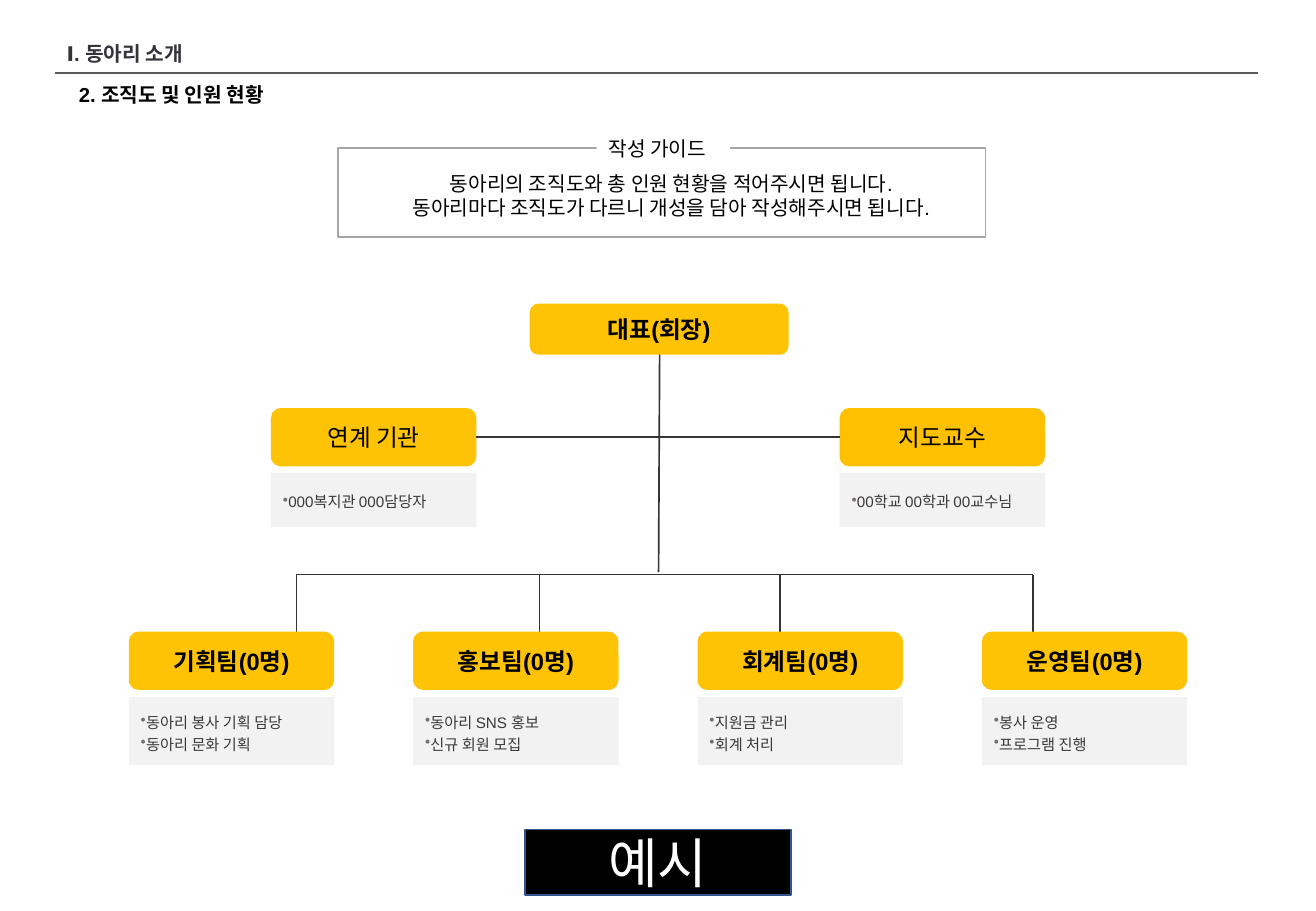
"""Build the club organisation chart slide."""
from lxml import etree
from pptx import Presentation, util as u
from pptx.dml.color import RGBColor
from pptx.enum import shapes, text
from pptx.oxml.ns import qn

WIDTH, HEIGHT = 10.83, 7.5
COLORS = dict(ink="36333A", black="000000", white="FFFFFF", rule="595959",
              frame="A6A6A6", yellow="FFC305", amber="FFC000", panel="F2F2F2",
              duty="3B3838", bullet="766F6B", border="325491")

SECTION = "Ⅰ. 동아리 소개"
TOPIC = "2. 조직도 및 인원 현황"
GUIDE_LABEL = "작성 가이드"
GUIDE = ["동아리의 조직도와 총 인원 현황을 적어주시면 됩니다.",
         "동아리마다 조직도가 다르니 개성을 담아 작성해주시면 됩니다."]
PRESIDENT = "대표(회장)"
PARTNERS = [
    (0.5, "연계 기관", ["000복지관 000담당자"], "yellow"),
    (2.5, "지도교수", ["00학교 00학과 00교수님"], "amber"),
]
TEAMS = [
    ("기획팀(0명)", ["동아리 봉사 기획 담당", "동아리 문화 기획"]),
    ("홍보팀(0명)", ["동아리 SNS 홍보", "신규 회원 모집"]),
    ("회계팀(0명)", ["지원금 관리", "회계 처리"]),
    ("운영팀(0명)", ["봉사 운영", "프로그램 진행"]),
]
STAMP = "예시"

GRID_LEFT, PITCH, CARD_WIDTH, CARD_HEIGHT = 1.06, 2.34, 1.69, 0.48
PARTNER_TOP, TEAM_TOP = 3.36, 5.2
BRANCH_Y, BRANCH_XS = 4.73, (2.44, 4.44, 6.42, 8.5)
RECTANGLE = shapes.MSO_SHAPE.RECTANGLE
ROUNDED = shapes.MSO_SHAPE.ROUNDED_RECTANGLE
CENTER, LEFT = text.PP_ALIGN.CENTER, text.PP_ALIGN.LEFT
TOP, MIDDLE, BOTTOM = (text.MSO_ANCHOR.TOP, text.MSO_ANCHOR.MIDDLE,
                       text.MSO_ANCHOR.BOTTOM)

presentation = Presentation()
presentation.slide_width = u.Inches(WIDTH)
presentation.slide_height = u.Inches(HEIGHT)
slide = presentation.slides.add_slide(presentation.slide_layouts[6])


def rgb(name):
    """Look up a named colour."""
    return RGBColor.from_string(COLORS[name])


def add_bullet(paragraph):
    """Give a paragraph a hanging grey bullet."""
    properties = paragraph._p.get_or_add_pPr()
    properties.set("marL", "0")
    properties.set("indent", str(-u.Inches(0.2)))
    color = etree.SubElement(properties, qn("a:buClr"))
    etree.SubElement(color, qn("a:srgbClr"), val=COLORS["bullet"])
    etree.SubElement(properties, qn("a:buChar"), char="•")


def write(shape, lines, size=12, color="black", bold=False, align=LEFT,
          anchor=TOP, wrap=True, grow=False, spacing=None, before=None,
          bullets=False):
    """Fill a shape with formatted paragraphs."""
    frame = shape.text_frame
    frame.word_wrap, frame.vertical_anchor = wrap, anchor
    if grow:
        frame.auto_size = text.MSO_AUTO_SIZE.SHAPE_TO_FIT_TEXT
    for index, line in enumerate(lines):
        paragraph = frame.add_paragraph() if index else frame.paragraphs[0]
        paragraph.alignment = align
        paragraph.line_spacing = spacing
        if before:
            paragraph.space_before = u.Pt(before)
        if bullets:
            add_bullet(paragraph)
        run = paragraph.add_run()
        run.text = line
        run.font.name, run.font.size, run.font.bold = "Arial", u.Pt(size), bold
        run.font.color.rgb = rgb(color)


def add_box(kind, left, top, width, height, fill=None, line=None):
    """Add a preset shape with an optional fill and outline."""
    shape = slide.shapes.add_shape(
        kind, *map(u.Inches, (left, top, width, height)))
    shape.shadow.inherit = False
    if fill:
        shape.fill.solid()
        shape.fill.fore_color.rgb = rgb(fill)
    else:
        shape.fill.background()
    if line:
        shape.line.color.rgb = rgb(line)
        shape.line.width = u.Pt(1)
    else:
        shape.line.fill.background()
    return shape


def add_text(left, top, width, height, lines, **style):
    """Add a text box."""
    box = slide.shapes.add_textbox(*map(u.Inches, (left, top, width, height)))
    write(box, lines, **style)


def add_line(x1, y1, x2, y2, color="ink", weight=1):
    """Add a straight connector without shadow."""
    connector = slide.shapes.add_connector(
        shapes.MSO_CONNECTOR.STRAIGHT, *map(u.Inches, (x1, y1, x2, y2)))
    connector.line.color.rgb = rgb(color)
    connector.line.width = u.Pt(weight)
    etree.SubElement(connector._element.spPr, qn("a:effectLst"))
    return connector


def add_card(column, top, title, duties, panel_offset, panel_height,
             fill="yellow", bold=False):
    """Add a title block with its duty panel on a grid column."""
    left = GRID_LEFT + column * PITCH
    header = add_box(ROUNDED, left, top, CARD_WIDTH, CARD_HEIGHT, fill)
    write(header, [title], size=14, bold=bold, align=CENTER, anchor=MIDDLE)
    panel = add_box(ROUNDED, left, top + panel_offset, CARD_WIDTH,
                    panel_height, "panel")
    panel.adjustments[0] = 0
    write(panel, duties, size=9, color="duty", anchor=MIDDLE, wrap=False,
          spacing=1.2, bullets=True)
    return header


add_box(RECTANGLE, 2.78, 1.22, 5.33, 0.73, line="frame")
add_text(0.45, 0.21, 1.53, 0.38, [SECTION], color="ink", bold=True,
         anchor=BOTTOM, spacing=0.9)
add_line(0.45, 0.6, 10.35, 0.6, "rule", 1.5)
add_text(0.55, 0.65, 3.75, 0.32, [TOPIC], bold=True, spacing=0.9, before=10)
label = add_box(RECTANGLE, 4.91, 1.07, 1.1, 0.3, "white")
write(label, [GUIDE_LABEL], wrap=False, grow=True)
add_text(2.65, 1.36, 5.75, 0.5, GUIDE, align=CENTER, grow=True)

add_line(5.43, 2.61, 5.42, 4.71)
add_line(BRANCH_XS[0], BRANCH_Y, BRANCH_XS[-1], BRANCH_Y)
for x in BRANCH_XS:
    add_line(x, BRANCH_Y, x, TEAM_TOP + 0.01)
president = add_box(ROUNDED, 4.36, 2.5, 2.13, 0.42, "yellow")
write(president, [PRESIDENT], size=14, bold=True, align=CENTER, anchor=MIDDLE)

agency, professor = [
    add_card(column, PARTNER_TOP, title, duties, 0.53, 0.45, fill=fill)
    for column, title, duties, fill in PARTNERS]
partner_y = PARTNER_TOP + CARD_HEIGHT / 2
partner_line = add_line(3.92, partner_y, 6.91, partner_y)
partner_line.begin_connect(agency, 3)
partner_line.end_connect(professor, 1)

for column, (title, duties) in enumerate(TEAMS):
    add_card(column, TEAM_TOP, title, duties, 0.54, 0.56, bold=True)

stamp = add_box(RECTANGLE, 4.32, 6.83, 2.19, 0.54, "black", "border")
write(stamp, [STAMP], size=32, color="white", align=CENTER, anchor=MIDDLE)

presentation.save("out.pptx")
